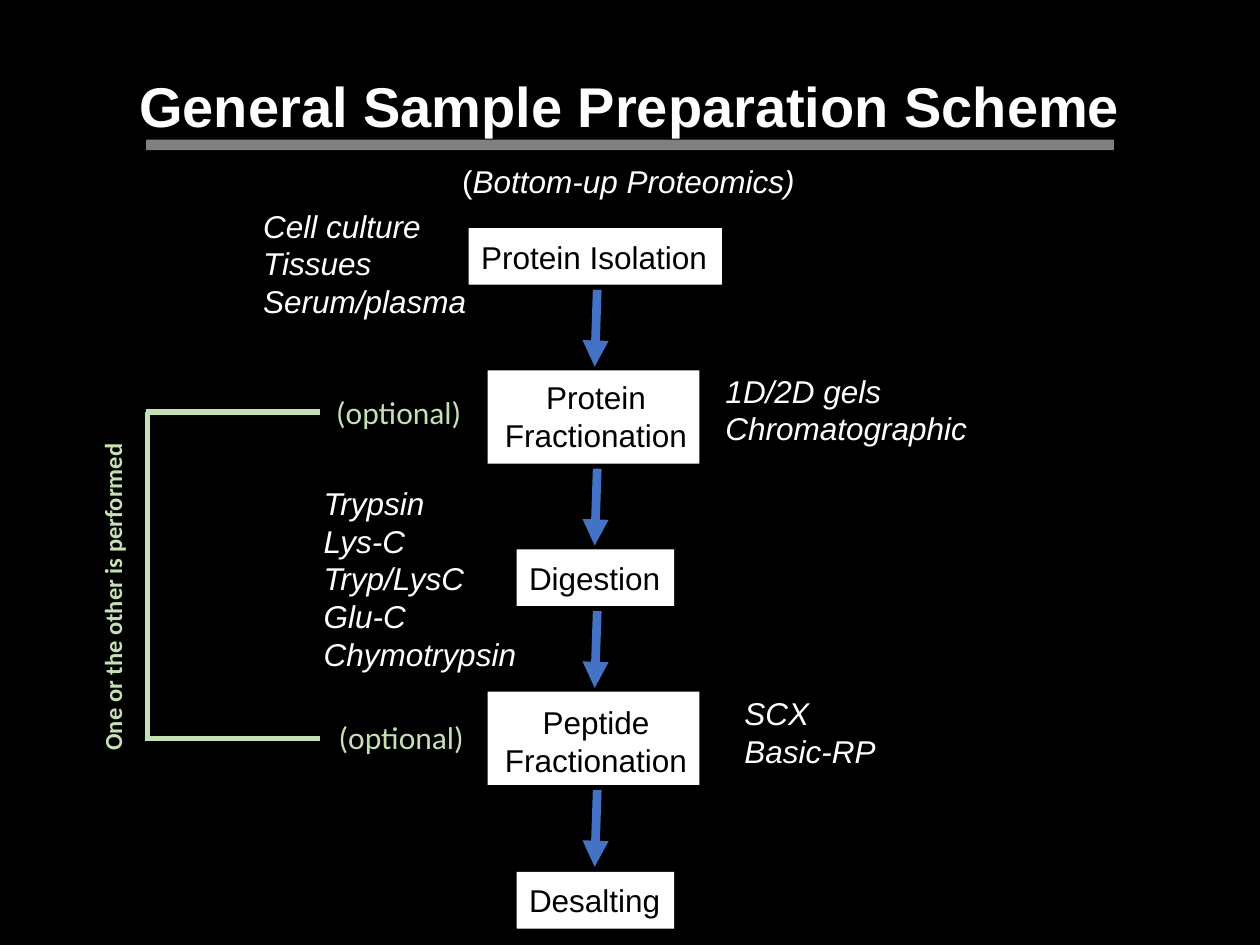
from lxml import etree
from pptx import Presentation
from pptx.dml.color import RGBColor
from pptx.enum.shapes import MSO_CONNECTOR, MSO_SHAPE
from pptx.enum.text import MSO_ANCHOR, MSO_AUTO_SIZE, PP_ALIGN
from pptx.oxml.ns import qn
from pptx.util import Emu, Pt

STRAIGHT = MSO_CONNECTOR.STRAIGHT
RECTANGLE = MSO_SHAPE.RECTANGLE
TOP = MSO_ANCHOR.TOP
GROW = MSO_AUTO_SIZE.SHAPE_TO_FIT_TEXT
LEFT, CENTER = PP_ALIGN.LEFT, PP_ALIGN.CENTER

EMU_PER_PX = 9144  # 100 px to the inch
TITLE_ONLY = 5
COLORS = {
    "background": "000000",
    "text": "FFFFFF",
    "step": "FFFFFF",
    "step_text": "000000",
    "arrow": "4472C4",
    "optional": "C5E0B4",
}


def px(*lengths):
    return [Emu(length * EMU_PER_PX) for length in lengths]


def rgb(name):
    return RGBColor.from_string(COLORS[name])


class Scheme:
    """Holds the style and the slide being drawn."""

    font = "Arial"
    note_font = "Calibri"
    size = 18

    def __init__(self, slide):
        self.slide = slide
        fill = slide.background.fill
        fill.solid()
        fill.fore_color.rgb = rgb("background")

    def style(self, frame, color, size=None, font=None, bold=False,
              italic=False, align=LEFT, wrap=False):
        frame.word_wrap = wrap
        frame.auto_size = GROW
        frame.vertical_anchor = TOP
        for paragraph in frame.paragraphs:
            paragraph.alignment = align
            for run in paragraph.runs:
                run.font.name = font or self.font
                run.font.size = Pt(size or self.size)
                run.font.bold = bold
                run.font.italic = italic
                run.font.color.rgb = rgb(color)

    def title(self, text, left, top, width, height):
        title = self.slide.shapes.title
        title.left, title.top, title.width, title.height = px(left, top, width, height)
        title.text_frame.text = text
        self.style(title.text_frame, "text", size=32, bold=True, align=CENTER)

    def text(self, text, left, top, width, height, color="text", parent=None, **style):
        shapes = (parent or self.slide).shapes
        box = shapes.add_textbox(*px(left, top, width, height))
        box.text_frame.text = text
        self.style(box.text_frame, color, **style)
        return box

    def step(self, text, box, label):
        """Group a filled rectangle with the label that lies on it."""
        group = self.slide.shapes.add_group_shape()
        rectangle = group.shapes.add_shape(RECTANGLE, *px(*box))
        rectangle.shadow.inherit = False
        rectangle.fill.solid()
        rectangle.fill.fore_color.rgb = rgb("step")
        rectangle.line.fill.background()
        two_lines = " " in text and label[3] > 40
        self.text(text, *label, color="step_text", parent=group,
                  align=CENTER if two_lines else LEFT, wrap=two_lines)

    def line(self, start, end, color, width, parent=None, opacity=None, arrow=False):
        shapes = (parent or self.slide).shapes
        connector = shapes.add_connector(STRAIGHT, *px(*start, *end))
        connector.line.color.rgb = rgb(color)
        connector.line.width = Pt(width)
        properties = connector._element.spPr
        outline = properties.find(qn("a:ln"))
        if opacity:
            tint = outline.find(".//" + qn("a:srgbClr"))
            etree.SubElement(tint, qn("a:alpha"), val=str(opacity * 1000))
        if arrow:
            etree.SubElement(outline, qn("a:tailEnd"), type="triangle")
        etree.SubElement(properties, qn("a:effectLst"))

    def bracket(self, left, right, top, bottom):
        group = self.slide.shapes.add_group_shape()
        spine = left + 1
        for start, end in (
            ((left, top), (right, top)),
            ((left, bottom), (right, bottom)),
            ((spine, top), (spine, bottom + 2)),
        ):
            self.line(start, end, "optional", 3, parent=group)


def main():
    presentation = Presentation()
    presentation.slide_width, presentation.slide_height = px(1000, 750)
    layout = presentation.slide_layouts[TITLE_ONLY]
    scheme = Scheme(presentation.slides.add_slide(layout))

    scheme.title("General Sample Preparation Scheme", 85, 52, 830, 64)
    scheme.line((116, 115), (884, 115), "text", 6, opacity=50)

    subtitle = scheme.text("(Bottom-up Proteomics)", 357, 124, 287, 40)
    paragraph = subtitle.text_frame.paragraphs[0]
    opening = paragraph.runs[0]
    opening.text = "("
    emphasis = paragraph.add_run()
    emphasis.text = "Bottom-up Proteomics)"
    emphasis.font.name = scheme.font
    emphasis.font.size = Pt(scheme.size)
    emphasis.font.italic = True
    emphasis.font.color.rgb = rgb("text")

    steps = [
        ("Protein Isolation", (372, 181, 201, 45), (372, 184, 201, 40)),
        ("Protein Fractionation", (387, 294, 168, 74), (383, 295, 180, 71)),
        ("Digestion", (410, 436, 125, 45), (410, 439, 125, 40)),
        ("Peptide Fractionation", (387, 549, 168, 74), (383, 553, 180, 71)),
        ("Desalting", (410, 692, 125, 45), (410, 694, 125, 40)),
    ]
    for name, box, label in steps:
        scheme.step(name, box, label)
    for _, (_, top, _, height), _ in steps[:-1]:
        start = top + height + 4
        scheme.line((474, start), (472, start + 61), "arrow", 5, arrow=True)

    examples = [
        (("Cell culture", "Tissues", "Serum/plasma"), (199, 159, 183, 101)),
        (("1D/2D gels", "Chromatographic"), (566, 290, 214, 71)),
        (("Trypsin", "Lys-C", "Tryp/LysC", "Glu-C", "Chymotrypsin"),
         (247, 379, 174, 162)),
        (("SCX", "Basic-RP"), (581, 546, 126, 71)),
    ]
    for names, place in examples:
        scheme.text("\n".join(names), *place, italic=True)

    for left, top in ((257, 307), (259, 565)):
        scheme.text("(optional)", left, top, 126, 40, color="optional",
                    font=scheme.note_font)
    scheme.bracket(116, 254, 327, 586)
    choice = scheme.text("One or the other is performed", -59, 440, 297, 34,
                         color="optional", size=14, font=scheme.note_font, bold=True)
    choice.rotation = 270

    presentation.save("out.pptx")


if __name__ == "__main__":
    main()
